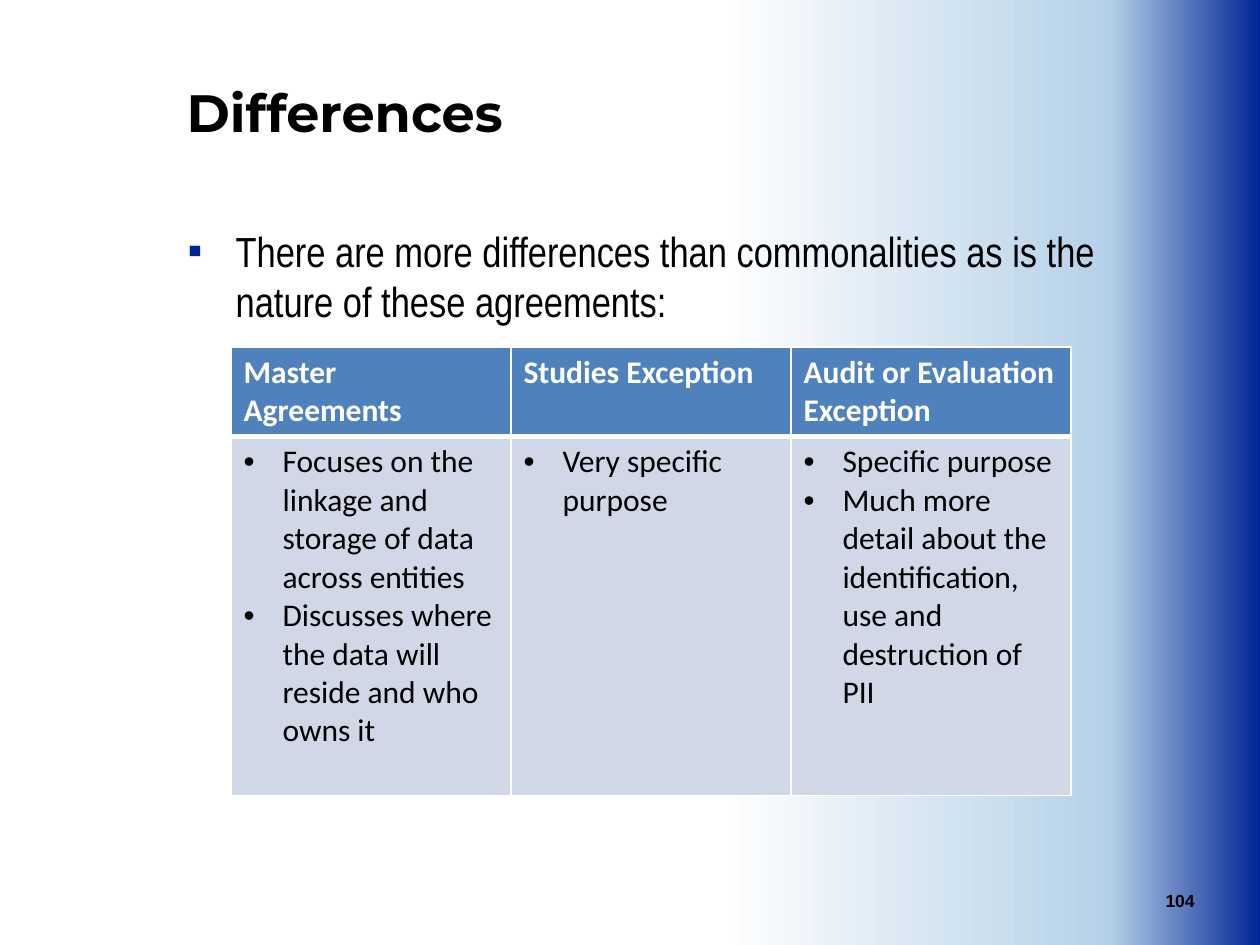
from lxml import etree
from pptx import Presentation
from pptx.dml.color import RGBColor
from pptx.enum.text import MSO_ANCHOR, MSO_AUTO_SIZE, PP_ALIGN
from pptx.oxml.ns import qn
from pptx.util import Pt

MIDDLE, TOP = MSO_ANCHOR.MIDDLE, MSO_ANCHOR.TOP
LEFT, RIGHT = PP_ALIGN.LEFT, PP_ALIGN.RIGHT
FIXED = MSO_AUTO_SIZE.NONE
EMU = 914400 / 126

NAVY, BLACK, WHITE = "002596", "000000", "FFFFFF"
HEAD, BODY = "4F81BD", "D0D8E8"
STOPS = [(0, NAVY), (12, "B5D1E8"), (43, WHITE)]
COLUMNS = [
    ("Master Agreements", [
        "Focuses on the linkage and storage of data across entities",
        "Discusses where the data will reside and who owns it"]),
    ("Studies Exception", ["Very specific purpose"]),
    ("Audit or Evaluation Exception", [
        "Specific purpose",
        "Much more detail about the identification, use and destruction of PII"]),
]


def px(n):
    return round(n * EMU)


def rgb(code):
    return RGBColor.from_string(code)


def sub(node, tag, **attrs):
    return etree.SubElement(node, qn(tag), attrs)


class Deck:
    def __init__(self):
        self.prs = Presentation()
        self.prs.slide_width, self.prs.slide_height = px(1260), px(945)
        self.slide = self.prs.slides.add_slide(self.prs.slide_layouts[1])

    def backdrop(self, stops):
        fill = self.slide.background.fill
        fill.gradient()
        fill.gradient_angle = 180
        rail = next(self.slide.element.iter(qn("a:gsLst")))
        for old in list(rail):
            rail.remove(old)
        for pos, code in stops:
            stop = sub(rail, "a:gs", pos=str(pos * 1000))
            sub(stop, "a:srgbClr", val=code)

    def frame(self, shape, box, anchor):
        shape.left, shape.top, shape.width, shape.height = map(px, box)
        text = shape.text_frame
        text.word_wrap = True
        text.auto_size = FIXED
        text.vertical_anchor = anchor
        return text

    def label(self, para, words, size, font, color=BLACK, bold=False, align=LEFT):
        para.alignment = align
        para.space_before = Pt(0)
        run = para.add_run()
        run.text = words
        run.font.size, run.font.name, run.font.bold = Pt(size), font, bold
        run.font.color.rgb = rgb(color)

    def bullet(self, para, mark, indent, color=BLACK):
        props = para._p.get_or_add_pPr()
        props.set("marL", str(px(indent)))
        props.set("indent", str(-px(indent)))
        sub(sub(props, "a:buClr"), "a:srgbClr", val=color)
        sub(props, "a:buFont", typeface="Arial")
        sub(props, "a:buChar", char=mark)

    def title(self, words, box):
        text = self.frame(self.slide.shapes.title, box, MIDDLE)
        self.label(text.paragraphs[0], words, 30, "Montserrat", bold=True)

    def body(self, words, box):
        text = self.frame(self.slide.placeholders[1], box, TOP)
        para = text.paragraphs[0]
        self.bullet(para, "▪", 48, NAVY)
        self.label(para, words, 24, "Arial Narrow")

    def number(self, words, box):
        shape = self.slide.shapes.add_textbox(*map(px, box))
        text = self.frame(shape, box, MIDDLE)
        self.label(text.paragraphs[0], words, 10, "Arial", bold=True, align=RIGHT)

    def paint(self, cell, color, top, bottom):
        """Set white borders, then the fill, which must follow them in the XML."""
        props = cell._tc.get_or_add_tcPr()
        for side, width in zip("LRTB", (1, 1, top, bottom)):
            line = sub(props, f"a:ln{side}", w=str(Pt(width)))
            sub(sub(line, "a:solidFill"), "a:srgbClr", val=WHITE)
        cell.fill.solid()
        cell.fill.fore_color.rgb = rgb(color)

    def table(self, columns, box, heights):
        grid = self.slide.shapes.add_table(2, len(columns), *map(px, box)).table
        grid.horz_banding = False
        for row, height in zip(grid.rows, heights):
            row.height = px(height)
        for col, (head, points) in enumerate(columns):
            grid.columns[col].width = px(box[2] // len(columns))
            top, low = grid.cell(0, col), grid.cell(1, col)
            self.paint(top, HEAD, 1, 3)
            self.paint(low, BODY, 3, 1)
            self.label(top.text_frame.paragraphs[0], head, 18, "Calibri", WHITE, True)
            text = low.text_frame
            for i, point in enumerate(points):
                para = text.add_paragraph() if i else text.paragraphs[0]
                self.bullet(para, "•", 39)
                self.label(para, point, 18, "Calibri")


def main():
    deck = Deck()
    deck.backdrop(STOPS)
    deck.title("Differences", (174, 33, 963, 158))
    deck.body("There are more differences than commonalities as is the "
              "nature of these agreements:", (175, 219, 963, 655))
    deck.number("104", (1145, 876, 62, 50))
    deck.table(COLUMNS, (231, 347, 840, 448), (89, 359))
    deck.prs.save("out.pptx")


if __name__ == "__main__":
    main()
